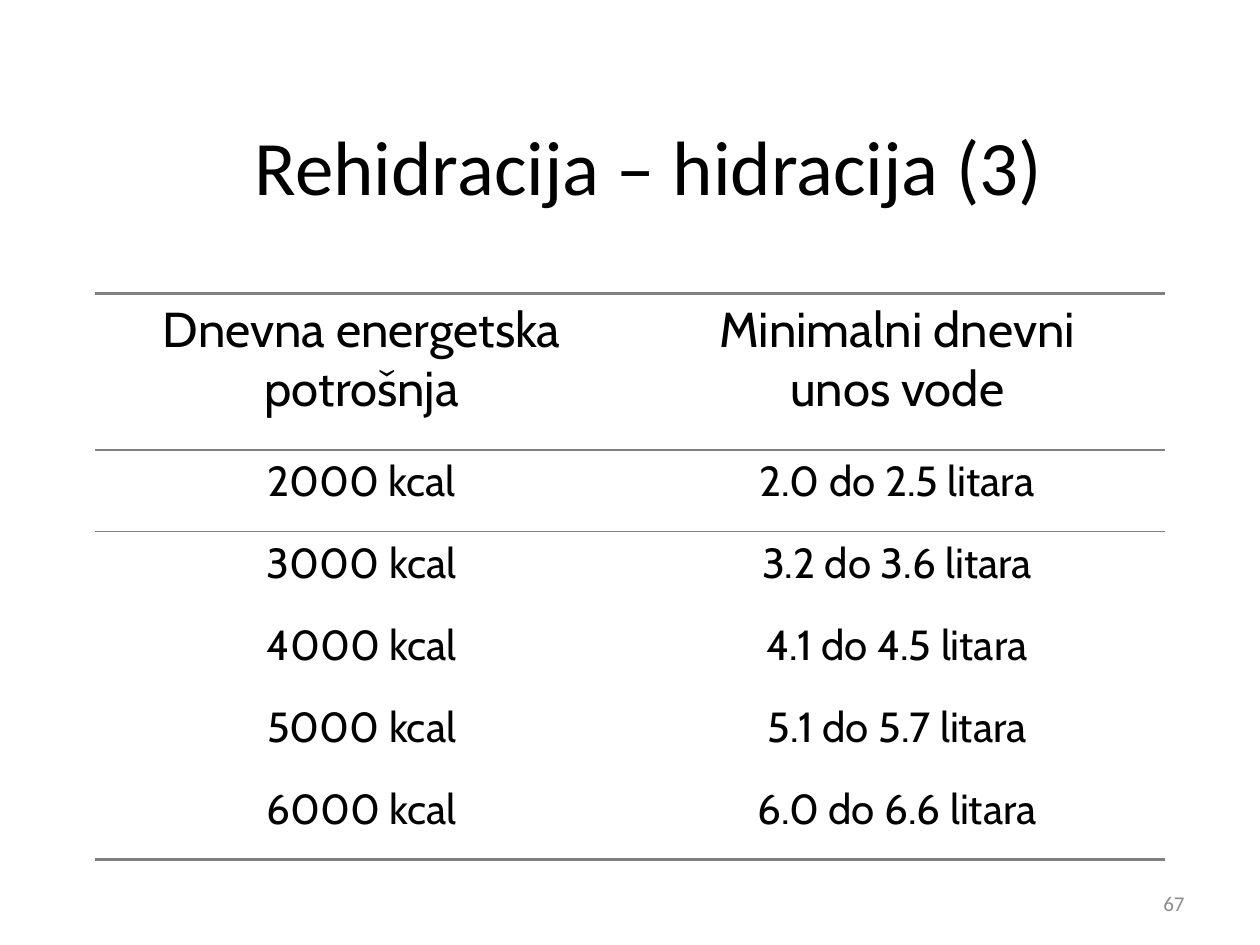
from pptx import Presentation
from pptx.dml.color import RGBColor
from pptx.enum.text import MSO_ANCHOR, PP_ALIGN
from pptx.oxml import parse_xml
from pptx.oxml.ns import nsdecls
from pptx.util import Inches, Pt

PLAIN = "{2D5ABB26-0587-4C30-8999-92F81FD0307C}"
ROWS = [
    ("Dnevna energetska\npotrošnja", "Minimalni dnevni\nunos vode"),
    ("2000 kcal", "2.0 do 2.5 litara"),
    ("3000 kcal", "3.2 do 3.6 litara"),
    ("4000 kcal", "4.1 do 4.5 litara"),
    ("5000 kcal", "5.1 do 5.7 litara"),
    ("6000 kcal", "6.0 do 6.6 litara"),
]


def color(code):
    return RGBColor.from_string(code)


def apply(item, values):
    for name, value in values.items():
        setattr(item, name, value)


class Page:
    ink = "000000"
    rule = "808080"
    body = "Cabin"
    head = "Calibri"

    def __init__(self, slide):
        self.slide = slide

    def fill(self, frame, text, font, size, align, code):
        frame.text = text
        for para in frame.paragraphs:
            para.alignment = align
            apply(para.font, {"name": font, "size": Pt(size)})
            para.font.color.rgb = color(code)

    def text(self, text, box, size, align, code, inset=0.1):
        frame = self.slide.shapes.add_textbox(*map(Inches, box)).text_frame
        apply(frame, {
            "word_wrap": True,
            "vertical_anchor": MSO_ANCHOR.MIDDLE,
            "margin_right": Inches(inset),
        })
        self.fill(frame, text, self.head, size, align, code)

    def border(self, cell, side, width):
        line = parse_xml(
            f'<a:ln{side} {nsdecls("a")} w="{Pt(width)}"><a:solidFill>'
            f'<a:srgbClr val="{self.rule}"/></a:solidFill></a:ln{side}>'
        )
        cell._tc.get_or_add_tcPr().insert(0, line)

    def cell(self, cell, text, size, lines):
        self.fill(cell.text_frame, text, self.body, size,
                  PP_ALIGN.CENTER, self.ink)
        for para in cell.text_frame.paragraphs:
            props = para._p.get_or_add_pPr()
            props.set("marL", str(Inches(0.38)))
            props.set("indent", str(Inches(-0.38)))
        cell.fill.background()
        for side, width in lines.items():
            self.border(cell, side, width)

    def table(self, rows, box, widths, heights):
        frame = self.slide.shapes.add_table(
            len(rows), len(widths), *map(Inches, box))
        table = frame.table
        apply(table, {"first_row": False, "horz_banding": False})
        table._tbl.tblPr.find("{*}tableStyleId").text = PLAIN
        for col, width in zip(table.columns, widths):
            col.width = Inches(width)
        for row, height in zip(table.rows, heights):
            row.height = Inches(height)
        edges = {0: {"B": 1, "T": 2.25}, 1: {"T": 1}, len(rows) - 1: {"B": 2}}
        for r, row in enumerate(rows):
            for c, text in enumerate(row):
                size = 24 if r else 28
                self.cell(table.cell(r, c), text, size, edges.get(r, {}))


def main():
    deck = Presentation()
    apply(deck, {"slide_width": Inches(10), "slide_height": Inches(7.5)})
    page = Page(deck.slides.add_slide(deck.slide_layouts[6]))
    page.text("Rehidracija – hidracija (3)", (1.26, 0.68, 8.52, 1.25),
              44, PP_ALIGN.CENTER, page.ink, inset=0.84)
    page.table(ROWS, (0.75, 2.33, 8.5, 4.5), (4.24, 4.26),
               [1.24] + [0.65] * (len(ROWS) - 1))
    page.text("67", (7.42, 6.92, 2.08, 0.5), 12, PP_ALIGN.RIGHT, "8C8C8C")
    deck.save("out.pptx")


if __name__ == "__main__":
    main()
